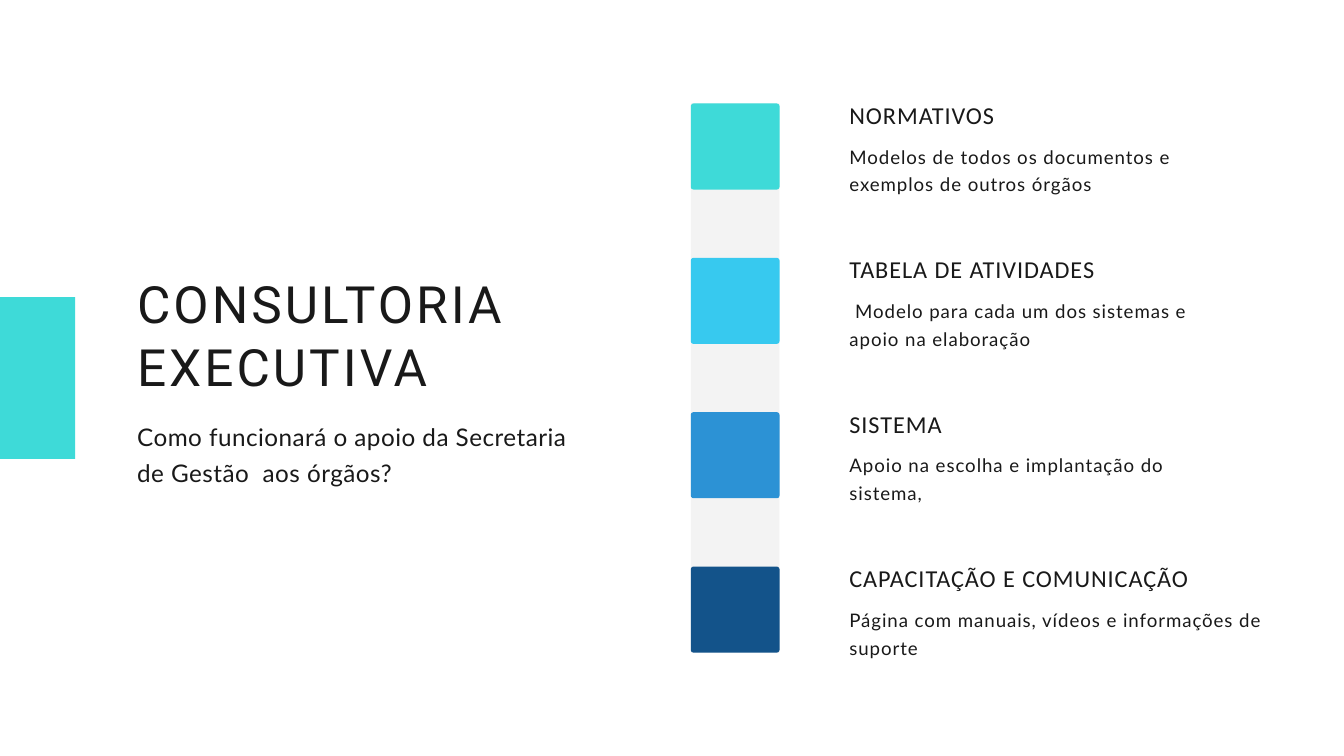
from lxml import etree
from pptx import Presentation
from pptx.dml.color import RGBColor
from pptx.enum import shapes, text
from pptx.oxml import ns
from pptx.util import Inches, Pt

# Content
TITLE = "CONSULTORIA EXECUTIVA"
SUBTITLE = "Como funcionará o apoio da Secretaria de Gestão  aos órgãos?"
# heading, description, square colour, text width
STEPS = [
    ("NORMATIVOS", "Modelos de todos os documentos e exemplos de outros órgãos", "turquoise", 5.82),
    ("TABELA DE ATIVIDADES", " Modelo para cada um dos sistemas e apoio na elaboração", "sky", 5.82),
    ("SISTEMA", "Apoio na escolha e implantação do sistema,", "blue", 5.82),
    ("CAPACITAÇÃO E COMUNICAÇÃO", "Página com manuais, vídeos e informações de suporte", "navy", 6.24),
]
COLOURS = {
    "ink": "191919",
    "turquoise": "3EDAD8",
    "sky": "37C9EF",
    "blue": "2C92D5",
    "navy": "13538A",
}

# Layout in inches
TITLE_LEFT, TITLE_WIDTH = 2.04, 6.52
SQUARE_LEFT, SQUARE_WIDTH, SQUARE_HEIGHT = 10.28, 1.32, 1.28
STEP_TOP, STEP_PITCH = 1.54, 2.297
TEXT_LEFT = 12.64
CORNER_RADIUS = 0.04


def write_text(shape, content, box, *, size, font, line, spacing):
    """Place a text shape and fill it with one formatted paragraph."""
    shape.left, shape.top, shape.width, shape.height = map(Inches, box)
    frame = shape.text_frame
    frame.word_wrap = True
    frame.auto_size = text.MSO_AUTO_SIZE.NONE
    frame.vertical_anchor = text.MSO_ANCHOR.TOP
    frame.margin_left = frame.margin_right = frame.margin_top = frame.margin_bottom = 0
    paragraph = frame.paragraphs[0]
    paragraph.alignment = text.PP_ALIGN.LEFT
    paragraph.line_spacing = Pt(line)
    paragraph.space_before = paragraph.space_after = Pt(0)
    run = paragraph.add_run()
    run.text = content
    run.font.size = Pt(size)
    run.font.name = font
    run.font.color.rgb = RGBColor.from_string(COLOURS["ink"])
    run.font._element.set("spc", str(round(spacing * 100)))


def add_block(slide, kind, box, colour, opacity=None):
    """Add a borderless filled shape, optionally see-through."""
    block = slide.shapes.add_shape(kind, *map(Inches, box))
    block.shadow.inherit = False
    block.line.fill.background()
    block.fill.solid()
    block.fill.fore_color.rgb = RGBColor.from_string(COLOURS[colour])
    if opacity is not None:
        colour_element = block._element.spPr.find(ns.qn("a:solidFill"))[0]
        etree.SubElement(colour_element, ns.qn("a:alpha")).set("val", str(opacity * 1000))
    return block


def main():
    presentation = Presentation()
    presentation.slide_width = Inches(20)
    presentation.slide_height = Inches(11.25)
    slide = presentation.slides.add_slide(presentation.slide_layouts[0])

    # Title and question
    write_text(slide.shapes.title, TITLE, (TITLE_LEFT, 4.02, TITLE_WIDTH, 1.87),
               size=55, font="Roboto", line=67.7, spacing=3.3)
    write_text(slide.placeholders[1], SUBTITLE, (TITLE_LEFT, 6.17, TITLE_WIDTH, 1.05),
               size=26, font="Lato", line=39, spacing=0.5)

    # Accent at the left edge and pale band behind the squares
    rectangle = shapes.MSO_SHAPE.RECTANGLE
    add_block(slide, rectangle, (0, 4.42, 1.12, 2.41), "turquoise")
    band_height = STEP_PITCH * (len(STEPS) - 1) + SQUARE_HEIGHT
    add_block(slide, rectangle, (SQUARE_LEFT, STEP_TOP, SQUARE_WIDTH, band_height), "ink", opacity=5)

    # Steps: square, heading and description
    for index, (heading, description, colour, width) in enumerate(STEPS):
        top = STEP_TOP + index * STEP_PITCH
        square = add_block(slide, shapes.MSO_SHAPE.ROUNDED_RECTANGLE,
                           (SQUARE_LEFT, top, SQUARE_WIDTH, SQUARE_HEIGHT), colour)
        square.adjustments[0] = CORNER_RADIUS / SQUARE_HEIGHT
        write_text(slide.shapes.add_textbox(0, 0, 0, 0), heading, (TEXT_LEFT, top - 0.08, width, 0.45),
                   size=26, font="Calibri", line=33.5, spacing=1)
        write_text(slide.shapes.add_textbox(0, 0, 0, 0), description, (TEXT_LEFT, top + 0.54, width, 0.8),
                   size=20, font="Lato", line=30, spacing=1)

    presentation.save("out.pptx")


if __name__ == "__main__":
    main()
